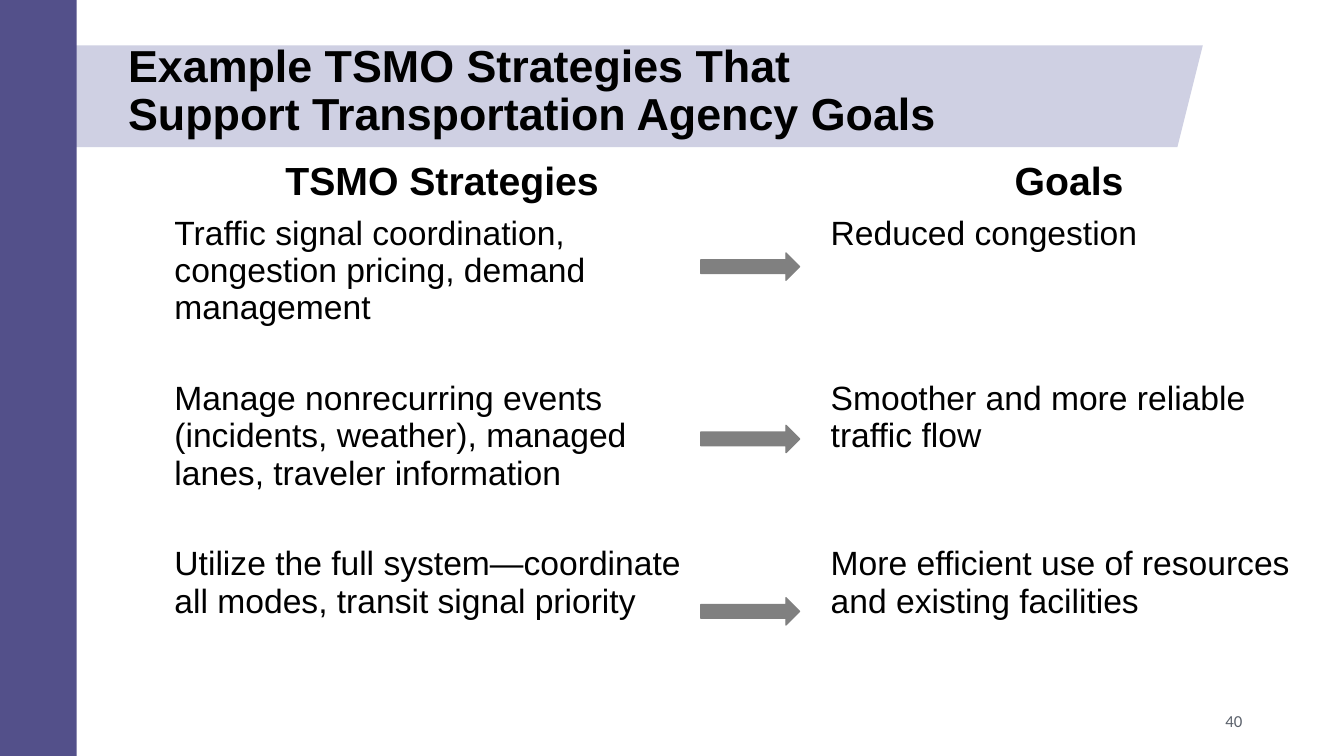
from dataclasses import dataclass
from itertools import product
from pptx import Presentation, util as u
from pptx.dml.color import RGBColor
from pptx.enum import shapes, text
from pptx.oxml import parse_xml
from pptx.oxml.ns import nsdecls

HUES = {"bar": "53508A", "band": "CFD0E3", "arrow": "808080",
        "ink": "000000", "page": "5B616B", "rule": "FFFFFF"}
WIDE, HIGH = u.Inches(13.33), u.Inches(7.5)
COLS = (41.33, 7.5, 36.98)
ROWS = (7.33, 21.87, 21.87, 14)
STEP = 22.8


@dataclass(frozen=True)
class Box:
    x: float
    y: float
    w: float
    h: float

    def emus(self) -> tuple:
        return col(self.x), row(self.y), col(self.w), row(self.h)


@dataclass(frozen=True)
class Style:
    size: float
    bold: bool = False
    hue: str = "ink"
    font: str = "Arial"
    align: text.PP_ALIGN = text.PP_ALIGN.LEFT


@dataclass(frozen=True)
class Pair:
    plan: str
    goal: str


HEAD = Style(28, True, align=text.PP_ALIGN.CENTER)
BODY = Style(24)
PAIRS = (
    Pair("TSMO Strategies", "Goals"),
    Pair("Traffic signal coordination, congestion pricing, demand management",
         "Reduced congestion"),
    Pair("Manage nonrecurring events (incidents, weather), managed lanes, "
         "traveler information", "Smoother and more reliable traffic flow"),
    Pair("Utilize the full system—coordinate all modes, transit signal priority",
         "More efficient use of resources and existing facilities"),
)


def col(n: float) -> int:
    return round(WIDE * n / 100)


def row(n: float) -> int:
    return round(HIGH * n / 100)


def tint(hue: str) -> RGBColor:
    return RGBColor.from_string(HUES[hue])


def write(frame, lines: tuple, style: Style) -> None:
    para = frame.paragraphs[0]
    para.alignment = style.align
    for i, line in enumerate(lines):
        if i:
            para.add_line_break()
        run = para.add_run()
        run.text = line
        run.font.size = u.Pt(style.size)
        run.font.bold = style.bold
        run.font.name = style.font
        run.font.color.rgb = tint(style.hue)


def draw(slide, kind, box: Box, hue: str, edge: bool = False):
    shape = slide.shapes.add_shape(kind, *box.emus())
    shape.shadow.inherit = False
    shape.fill.solid()
    shape.fill.fore_color.rgb = tint(hue)
    if edge:
        shape.line.color.rgb = tint(hue)
        shape.line.width = u.Pt(1)
    else:
        shape.line.fill.background()
    return shape


def rule(cell, top: int, base: int) -> None:
    props = cell._tc.get_or_add_tcPr()
    for i, (side, size) in enumerate(zip("LRTB", (1, 1, top, base))):
        props.insert(i, parse_xml(
            f'<a:ln{side} {nsdecls("a")} w="{u.Pt(size)}"><a:solidFill>'
            f'<a:srgbClr val="{HUES["rule"]}"/></a:solidFill></a:ln{side}>'))


def add_grid(slide) -> None:
    box = Box(12.23, 20.4, sum(COLS), sum(ROWS))
    table = slide.shapes.add_table(len(ROWS), len(COLS), *box.emus()).table
    table.horz_banding = False
    for line, size in zip(table.columns, COLS):
        line.width = col(size)
    for line, size in zip(table.rows, ROWS):
        line.height = row(size)
    for r, c in product(range(len(ROWS)), range(len(COLS))):
        cell = table.cell(r, c)
        cell.fill.background()
        rule(cell, 3 if r == 1 else 1, 3 if r == 0 else 1)
        if r == 0:
            cell.vertical_anchor = text.MSO_ANCHOR.MIDDLE
        words = (PAIRS[r].plan, "", PAIRS[r].goal)[c]
        if words:
            write(cell.text_frame, (words,), BODY if r else HEAD)


def add_title(slide) -> None:
    title = slide.shapes.title
    title.left, title.top, title.width, title.height = Box(
        8.78, 5.33, 73.82, 13.73).emus()
    frame = title.text_frame
    frame.word_wrap = True
    frame.auto_size = text.MSO_AUTO_SIZE.NONE
    frame.vertical_anchor = text.MSO_ANCHOR.MIDDLE
    write(frame, ("Example TSMO Strategies That",
                  "Support Transportation Agency Goals"), Style(32, True))
    frame.paragraphs[0].line_spacing = 0.9
    title.element.getparent().append(title.element)


def add_page(slide) -> None:
    frame = slide.shapes.add_textbox(*Box(70.67, 92.67, 22.5, 5.33).emus()).text_frame
    frame.word_wrap = True
    frame.vertical_anchor = text.MSO_ANCHOR.MIDDLE
    write(frame, ("40",), Style(12, hue="page", font="Calibri",
                                align=text.PP_ALIGN.RIGHT))


def main() -> None:
    deck = Presentation()
    deck.slide_width, deck.slide_height = WIDE, HIGH
    slide = deck.slides.add_slide(deck.slide_layouts[5])
    kinds = shapes.MSO_SHAPE
    band = draw(slide, kinds.PARALLELOGRAM, Box(1.8, 6, 87.7, 13.47), "band")
    band.adjustments[0] = 0.25
    draw(slide, kinds.RECTANGLE, Box(0, 0, 5.7, 100), "bar")
    add_title(slide)
    add_grid(slide)
    for i in range(len(PAIRS) - 1):
        draw(slide, kinds.RIGHT_ARROW,
             Box(52.14, 33.47 + i * STEP, 7.35, 3.6), "arrow", True)
    add_page(slide)
    deck.save("out.pptx")


if __name__ == "__main__":
    main()
